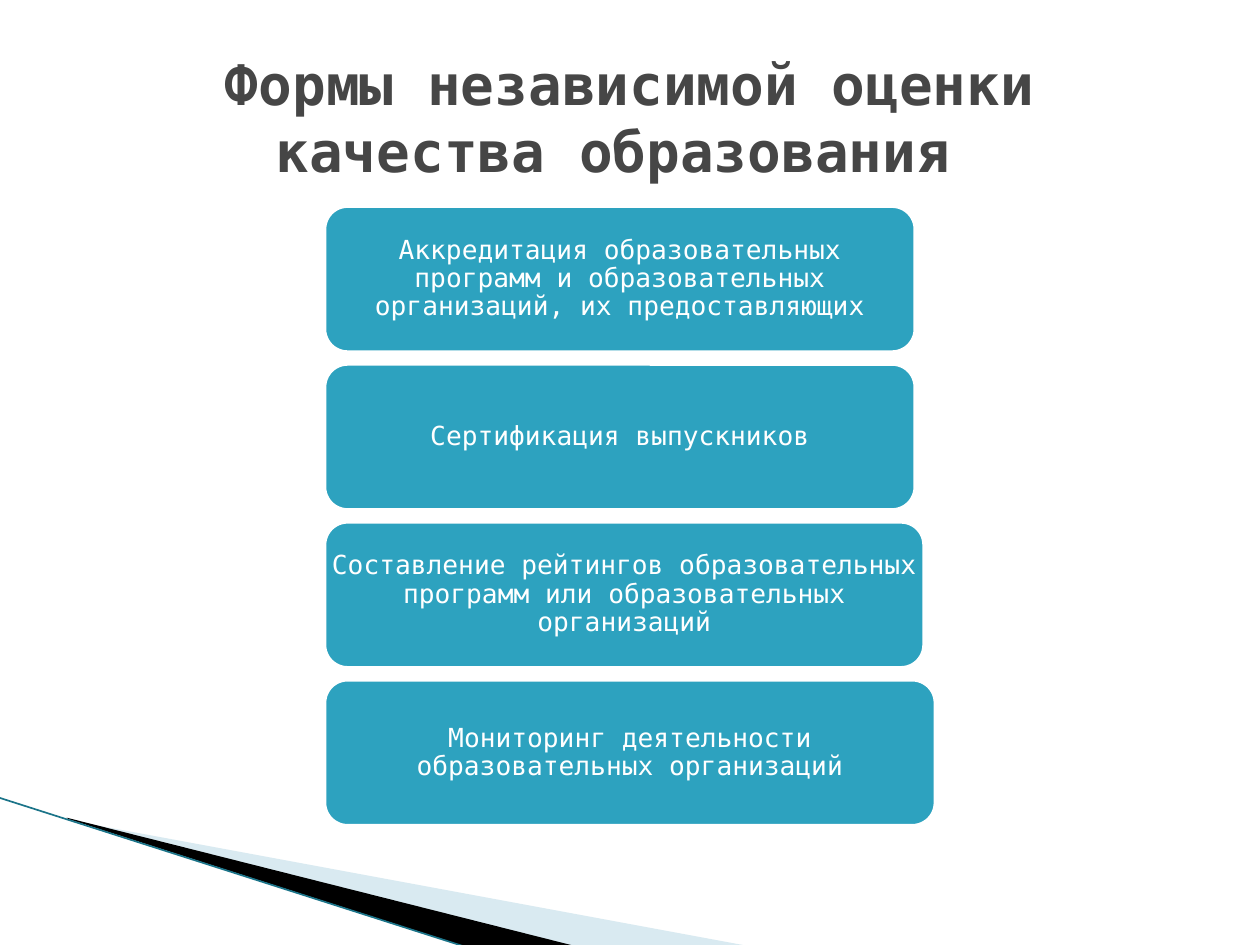
import dataclasses

import pptx
import pptx.dml.color
import pptx.enum.shapes
import pptx.enum.text
import pptx.oxml.ns
import pptx.util
from lxml import etree

WIDE, HIGH = 10, 7.5
LEFT, TOP, STEP, TALL = 2.56, 1.62, 1.253, 1.19


@dataclasses.dataclass(frozen=True)
class Theme:
    """Hold the colours, font and type sizes of the slide."""
    font: str = "DejaVu Sans Mono"
    head: str = "464646"
    box: str = "2DA2BF"
    white: str = "FFFFFF"
    pale: str = "A0CBDC"
    dark: str = "000000"
    edge: str = "1B7489"
    big: int = 32
    text: int = 15


THEME = Theme()
FORMS = [
    ("Аккредитация образовательных программ и образовательных организаций, их предоставляющих", 4.72),
    ("Сертификация выпускников", 4.72),
    ("Составление рейтингов образовательных программ или образовательных организаций", 4.79),
    ("Мониторинг деятельности образовательных организаций", 4.88),
]


def inch(*nums):
    """Turn numbers of inches into lengths."""
    return [pptx.util.Inches(num) for num in nums]


def tint(code):
    """Turn a hex code into a colour."""
    return pptx.dml.color.RGBColor.from_string(code)


def write(shape, text, size, color, bold=False, space=1.0, pad=(0.1, 0.05)):
    """Put centred text into a shape."""
    frame = shape.text_frame
    frame.word_wrap = True
    frame.auto_size = pptx.enum.text.MSO_AUTO_SIZE.NONE
    frame.vertical_anchor = pptx.enum.text.MSO_ANCHOR.MIDDLE
    frame.margin_left = frame.margin_right = pptx.util.Inches(pad[0])
    frame.margin_top = frame.margin_bottom = pptx.util.Inches(pad[1])
    para = frame.paragraphs[0]
    para.alignment = pptx.enum.text.PP_ALIGN.CENTER
    para.line_spacing = space
    run = para.add_run()
    run.text = text
    run.font.name = THEME.font
    run.font.size = pptx.util.Pt(size)
    run.font.bold = bold
    run.font.color.rgb = tint(color)


def add_wedge(slide, points, color, alpha=100):
    """Draw a filled outline without a border."""
    start, *rest = [inch(*point) for point in points]
    pen = slide.shapes.build_freeform(*start)
    pen.add_line_segments(rest, close=True)
    wedge = pen.convert_to_shape()
    wedge.shadow.inherit = False
    wedge.line.fill.background()
    wedge.fill.solid()
    wedge.fill.fore_color.rgb = tint(color)
    if alpha < 100:
        node = wedge.fill._xPr.find(".//" + pptx.oxml.ns.qn("a:srgbClr"))
        etree.SubElement(node, pptx.oxml.ns.qn("a:alpha"), val=str(alpha * 1000))


def add_line(slide, start, end, color, width):
    """Draw a straight line without a shadow."""
    kind = pptx.enum.shapes.MSO_CONNECTOR.STRAIGHT
    line = slide.shapes.add_connector(kind, *inch(*start, *end))
    line.line.color.rgb = tint(color)
    line.line.width = pptx.util.Pt(width)
    etree.SubElement(line._element.spPr, pptx.oxml.ns.qn("a:effectLst"))


def add_box(slide, row, text, width):
    """Draw one rounded box in its row of the list."""
    kind = pptx.enum.shapes.MSO_SHAPE.ROUNDED_RECTANGLE
    box = slide.shapes.add_shape(kind, *inch(LEFT, TOP + row * STEP, width, TALL))
    box.shadow.inherit = False
    box.fill.solid()
    box.fill.fore_color.rgb = tint(THEME.box)
    box.line.color.rgb = tint(THEME.white)
    box.line.width = pptx.util.Pt(4.33)
    write(box, text, THEME.text, THEME.white, space=0.9, pad=(0, 0))


def add_title(slide, text):
    """Place and fill the title."""
    title = slide.shapes.title
    title.left, title.top, title.width, title.height = inch(0.5, 0.3, 0.9 * WIDE, HIGH / 6)
    write(title, text, THEME.big, THEME.head, bold=True)


def main():
    """Build and save the slide."""
    deck = pptx.Presentation()
    deck.slide_width, deck.slide_height = inch(WIDE, HIGH)
    slide = deck.slides.add_slide(deck.slide_layouts[5])
    add_wedge(slide, [(0.55, 6.51), (5.95, 7.51), (4.56, 7.51), (0.55, 6.5)], THEME.pale, 40)
    add_wedge(slide, [(0.53, 6.49), (4.57, 7.51), (3.72, 7.52), (0.54, 6.5)], THEME.dark)
    add_line(slide, (-0.01, 6.33), (3.71, 7.52), THEME.edge, 0.95)
    for row, (text, width) in enumerate(FORMS):
        add_box(slide, row, text, width)
    add_title(slide, "Формы независимой оценки качества образования ")
    deck.save("out.pptx")


if __name__ == "__main__":
    main()
